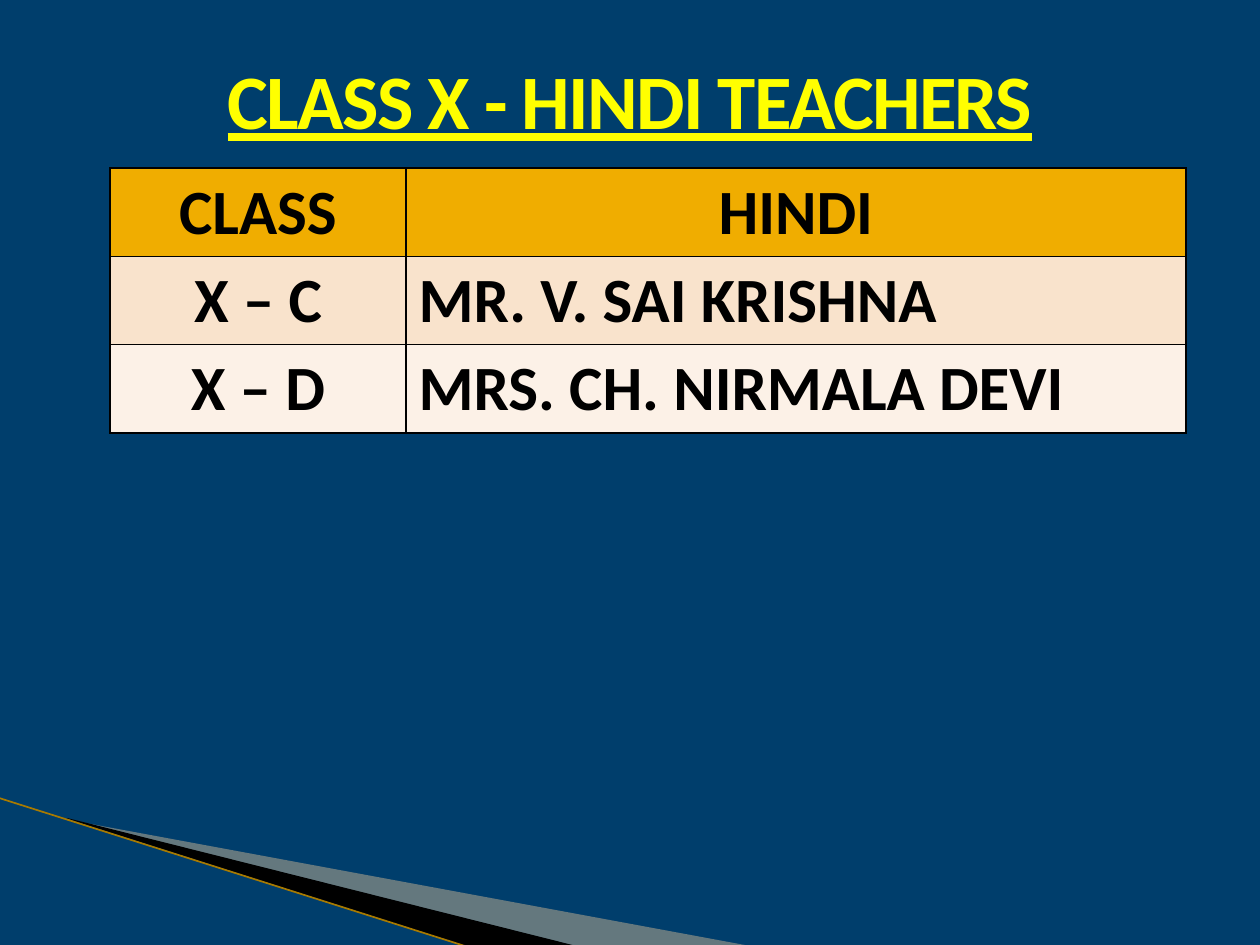
from dataclasses import dataclass
from typing import Optional

from lxml import etree
from pptx import Presentation
from pptx import util as u
from pptx.dml import color
from pptx.enum import shapes, text
from pptx.oxml import ns

SCALE = u.Inches(1) / 126


@dataclass(frozen=True)
class Theme:
    font: str = "Calibri"
    background: str = "003E6C"
    title: str = "FFFF00"
    ink: str = "000000"
    header: str = "F0AD00"
    bands: tuple = ("F9E3CC", "FCF1E7")
    wedge: str = "FCCF9B"
    edge: str = "A87A00"
    title_size: int = 44
    cell_size: int = 36
    border: float = 1
    edge_width: float = 0.95


@dataclass(frozen=True)
class Wedge:
    frame: tuple
    points: tuple
    fill: str
    opacity: Optional[int] = None


@dataclass(frozen=True)
class TableRow:
    texts: tuple
    fill: str
    aligns: tuple


THEME = Theme()
CENTER, LEFT = text.PP_ALIGN.CENTER, text.PP_ALIGN.LEFT
WEDGES = (
    Wedge((98, 689, 524, 199), ((69, 820), (750, 946), (575, 946), (69, 819)),
          THEME.wedge, 40),
    Wedge((-8, 798, 524, 116), ((67, 818), (576, 946), (469, 947), (68, 819)),
          THEME.ink),
)
ROWS = (
    TableRow(("CLASS", "HINDI"), THEME.header, (CENTER, CENTER)),
    TableRow(("X – C", "MR. V. SAI KRISHNA"), THEME.bands[0], (CENTER, LEFT)),
    TableRow(("X – D", "MRS. CH. NIRMALA DEVI"), THEME.bands[1], (CENTER, LEFT)),
)
COLUMNS = (296, 780)
ROW_HEIGHT = 88


def px(*values: int) -> list[int]:
    return [round(v * SCALE) for v in values]


def rgb(value: str) -> color.RGBColor:
    return color.RGBColor.from_string(value)


def paint(fill, value: str) -> None:
    fill.solid()
    fill.fore_color.rgb = rgb(value)


def write(p, words: str, ink: str, **formats):
    r = p.add_run()
    r.text = words
    for name, value in {"name": THEME.font, "bold": True, **formats}.items():
        setattr(r.font, name, value)
    r.font.color.rgb = rgb(ink)
    return r


def set_frame(sp, wedge: Wedge) -> None:
    left, top, width, height = wedge.frame
    for name, value in zip(("left", "top", "width", "height"), px(*wedge.frame)):
        setattr(sp, name, value)
    outline = sp._element.spPr.find(".//" + ns.qn("a:path"))
    outline.set("w", str(width))
    outline.set("h", str(height))
    for pt, (x, y) in zip(outline.iter(ns.qn("a:pt")), wedge.points):
        pt.set("x", str(x - left))
        pt.set("y", str(y - top))


def draw_wedge(s, wedge: Wedge) -> None:
    start, *rest = wedge.points
    builder = s.shapes.build_freeform(*start, scale=SCALE)
    builder.add_line_segments(rest, close=False)
    sp = builder.convert_to_shape()
    set_frame(sp, wedge)
    sp.shadow.inherit = False
    sp.line.fill.background()
    paint(sp.fill, wedge.fill)
    if wedge.opacity is not None:
        clr = sp.fill._xPr.find(".//" + ns.qn("a:srgbClr"))
        etree.SubElement(clr, ns.qn("a:alpha"), val=str(wedge.opacity * 1000))


def draw_edge(s) -> None:
    sp = s.shapes.add_connector(shapes.MSO_CONNECTOR.STRAIGHT, *px(-1, 798, 468, 947))
    sp.line.color.rgb = rgb(THEME.edge)
    sp.line.width = u.Pt(THEME.edge_width)
    etree.SubElement(sp._element.spPr, ns.qn("a:effectLst"))


def draw_title(s) -> None:
    tf = s.shapes.add_textbox(*px(0, 0, 1260, 139)).text_frame
    tf.word_wrap = True
    tf.auto_size = text.MSO_AUTO_SIZE.SHAPE_TO_FIT_TEXT
    p = tf.paragraphs[0]
    p.alignment, p.line_spacing = CENTER, 1.5
    indent = px(48)[0]
    p._p.get_or_add_pPr().set("marL", str(indent))
    p._p.get_or_add_pPr().set("indent", str(-indent))
    r = write(p, "CLASS X - HINDI TEACHERS", THEME.title,
              size=u.Pt(THEME.title_size), underline=True)
    r.font._element.set("spc", "-100")


def add_borders(cell) -> None:
    tc_pr = cell._tc.get_or_add_tcPr()
    for i, side in enumerate("LRTB"):
        ln = etree.Element(ns.qn(f"a:ln{side}"), w=str(u.Pt(THEME.border)))
        fill = etree.SubElement(ln, ns.qn("a:solidFill"))
        etree.SubElement(fill, ns.qn("a:srgbClr"), val=THEME.ink)
        tc_pr.insert(i, ln)


def draw_table(s, rows: tuple[TableRow, ...]) -> None:
    box = px(110, 168, sum(COLUMNS), ROW_HEIGHT * len(rows))
    table = s.shapes.add_table(len(rows), len(COLUMNS), *box).table
    for column, width in zip(table.columns, px(*COLUMNS)):
        column.width = width
    for line, row in zip(table.rows, rows):
        line.height = px(ROW_HEIGHT)[0]
        for cell, words, align in zip(line.cells, row.texts, row.aligns):
            paint(cell.fill, row.fill)
            add_borders(cell)
            p = cell.text_frame.paragraphs[0]
            p.alignment = align
            write(p, words, THEME.ink, size=u.Pt(THEME.cell_size))


def main() -> None:
    prs = Presentation()
    prs.slide_width, prs.slide_height = px(1260, 945)
    s = prs.slides.add_slide(prs.slide_layouts[6])
    paint(s.background.fill, THEME.background)
    for wedge in WEDGES:
        draw_wedge(s, wedge)
    draw_edge(s)
    draw_title(s)
    draw_table(s, ROWS)
    prs.save("out.pptx")


if __name__ == "__main__":
    main()
